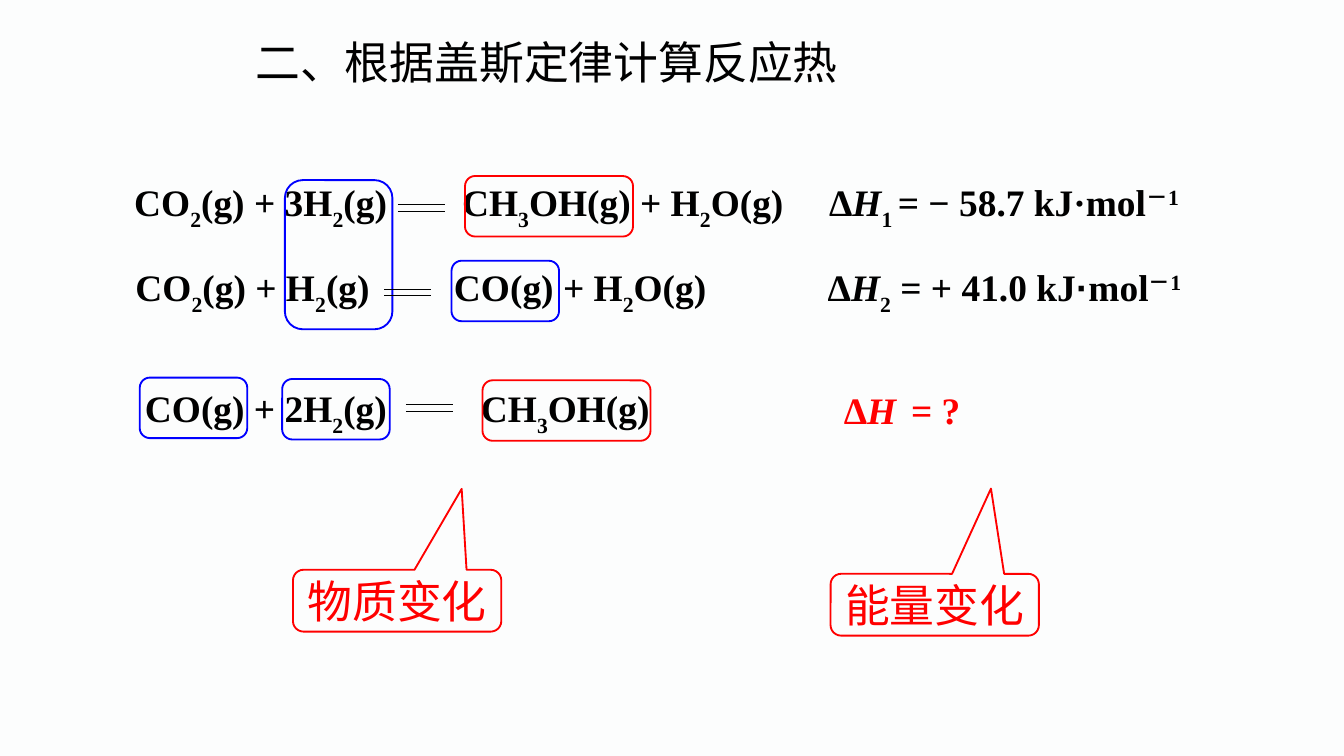
from dataclasses import dataclass

from lxml.etree import SubElement
from pptx import Presentation
from pptx.dml.color import RGBColor
from pptx.enum.shapes import MSO_CONNECTOR, MSO_SHAPE
from pptx.enum.text import MSO_ANCHOR, MSO_AUTO_SIZE, PP_ALIGN
from pptx.oxml.ns import qn
from pptx.util import Inches, Pt


@dataclass(frozen=True)
class Theme:
    background = RGBColor(0xFC, 0xFD, 0xFD)
    black = RGBColor(0, 0, 0)
    red = RGBColor(0xFF, 0, 0)
    blue = RGBColor(0, 0, 0xFF)
    formula_font = "Times New Roman"
    dot_font = "Arial"
    chinese_font = "Noto Sans CJK SC"
    heading = Pt(24)
    formula = Pt(20)
    outline = Pt(1)
    hairline = Pt(0.25)


T = Theme()
WIDTH = Inches(10)
HEIGHT = WIDTH * 9 // 16
CELL = WIDTH / 100  # the grid has 100 columns of square cells

# Equations are split at "|"; the first character of a part may be a mark:
# _ subscript, ^ superscript, / italic, ~ dot font. A tab goes to the next stop.
REACTIONS = [
    dict(box=(9, 13.1, 82.1, 4.4), stops=(24.4, 51.7), sign=(20.6, 2.1),
         text="CO|_2|(g) + 3H|_2|(g)\tCH|_3|OH(g) + H|_2|O(g)\tΔ|/H|_1 |"
              "= − 58.7 kJ·mol|^－1",
         frames=[(T.blue, 12.2, 0.3, 8, 11.1), (T.red, 25.6, 0, 12.5, 4.5)]),
    dict(box=(9.1, 19.4, 85, 4.4), stops=(23.7, 51.5), sign=(19.5, 2.1),
         text="CO|_2|(g) + H|_2|(g)\tCO(g) + H|_2|O(g)\tΔ|/H|_2| "
              "= + 41.0 kJ|~·|mol|^－1",
         frames=[(T.blue, 24.5, 0, 8, 4.5)]),
    dict(box=(9.8, 28.4, 79.2, 4.4), stops=(25,), sign=(20.4, 1.7),
         text="CO(g) + 2H|_2|(g)\tCH|_3|OH(g)",
         frames=[(T.blue, 0.6, -0.3, 8, 4.5), (T.blue, 11.2, -0.2, 8, 4.5),
                 (T.red, 26.1, -0.1, 12.5, 4.5)]),
]
CALLOUTS = [
    ("物质变化", (21.8, 42.4, 15.5, 4.6), (0.31, -1.81, 0.17)),
    ("能量变化", (61.8, 42.7, 15.5, 4.6), (0.27, -1.88, 0.17)),
]


def grid(*cells):
    return [round(c * CELL) for c in cells]


def set_all(obj, **values):
    for name, value in values.items():
        setattr(obj, name, value)


def add_run(p, text, font, size, color, bold=False, italic=False, baseline=0):
    r = p.add_run()
    r.text = text
    set_all(r.font, name=font, size=size, bold=bold, italic=italic)
    r.font.color.rgb = color
    rPr = r.font._element
    if font == T.chinese_font:
        SubElement(rPr, qn("a:ea"), typeface=font)
    if baseline:
        rPr.set("baseline", str(baseline))


def add_formula(s, box, text, stops, color, wrap=True):
    tf = s.shapes.add_textbox(*grid(*box)).text_frame
    set_all(tf, word_wrap=wrap, auto_size=MSO_AUTO_SIZE.SHAPE_TO_FIT_TEXT,
            vertical_anchor=MSO_ANCHOR.MIDDLE)
    p = tf.paragraphs[0]
    tabs = SubElement(p._p.get_or_add_pPr(), qn("a:tabLst"))
    for stop in grid(*stops):
        SubElement(tabs, qn("a:tab"), pos=str(stop), algn="l")
    marks = {"_": dict(baseline=-30000), "^": dict(baseline=30000),
             "/": dict(italic=True), "~": dict(font=T.dot_font)}
    for part in text.split("|"):
        style = dict(font=T.formula_font, size=T.formula, color=color, bold=True)
        mark = marks.get(part[0])
        add_run(p, part[1:] if mark else part, **{**style, **(mark or {})})


def add_outline(s, kind, box, color):
    sp = s.shapes.add_shape(kind, *grid(*box))
    sp.shadow.inherit = False
    sp.fill.background()
    sp.line.color.rgb = color
    sp.line.width = T.outline
    return sp


def add_equals_sign(s, x, y, length=3.5, gap=0.5):
    for row in (y, y + gap):
        line = s.shapes.add_connector(MSO_CONNECTOR.STRAIGHT,
                                      *grid(x, row, x + length, row))
        line.line.color.rgb = T.black
        line.line.width = T.hairline
        SubElement(line._element.spPr, qn("a:effectLst"))


def add_reaction(s, box, text, stops, sign, frames):
    """Place an equation, its equals sign and the frames round its terms."""
    x, y = box[:2]
    add_formula(s, box, text, stops, T.black)
    add_equals_sign(s, x + sign[0], y + sign[1])
    for color, dx, dy, w, h in frames:
        add_outline(s, MSO_SHAPE.ROUNDED_RECTANGLE, (x + dx, y + dy, w, h), color)


def add_callout(s, box, text, adjustments):
    sp = add_outline(s, MSO_SHAPE.ROUNDED_RECTANGULAR_CALLOUT, box, T.red)
    for i, value in enumerate(adjustments):
        sp.adjustments[i] = value
    tf = sp.text_frame
    set_all(tf, margin_left=0, margin_right=0, margin_top=0, margin_bottom=0,
            word_wrap=True, vertical_anchor=MSO_ANCHOR.MIDDLE)
    p = tf.paragraphs[0]
    p.alignment = PP_ALIGN.CENTER
    add_run(p, text, T.chinese_font, T.heading, T.red)


def add_title(s, box, text):
    sp = s.shapes.title
    set_all(sp, **dict(zip(("left", "top", "width", "height"), grid(*box))))
    tf = sp.text_frame
    set_all(tf, word_wrap=False, auto_size=MSO_AUTO_SIZE.NONE,
            vertical_anchor=MSO_ANCHOR.TOP)
    p = tf.paragraphs[0]
    p.alignment = PP_ALIGN.LEFT
    add_run(p, text, T.chinese_font, T.heading, T.black)


def main():
    prs = Presentation()
    set_all(prs, slide_width=WIDTH, slide_height=HEIGHT)
    s = prs.slides.add_slide(prs.slide_layouts[5])
    s.background.fill.solid()
    s.background.fill.fore_color.rgb = T.background
    add_title(s, (18, 2.1, 45.8, 5), "二、根据盖斯定律计算反应热")
    for reaction in REACTIONS:
        add_reaction(s, **reaction)
    add_formula(s, (61.8, 28.3, 10.8, 4.4), "Δ|/H|\t= ?", (5,), T.red, wrap=False)
    for text, box, adjustments in CALLOUTS:
        add_callout(s, box, text, adjustments)
    prs.save("out.pptx")


if __name__ == "__main__":
    main()
